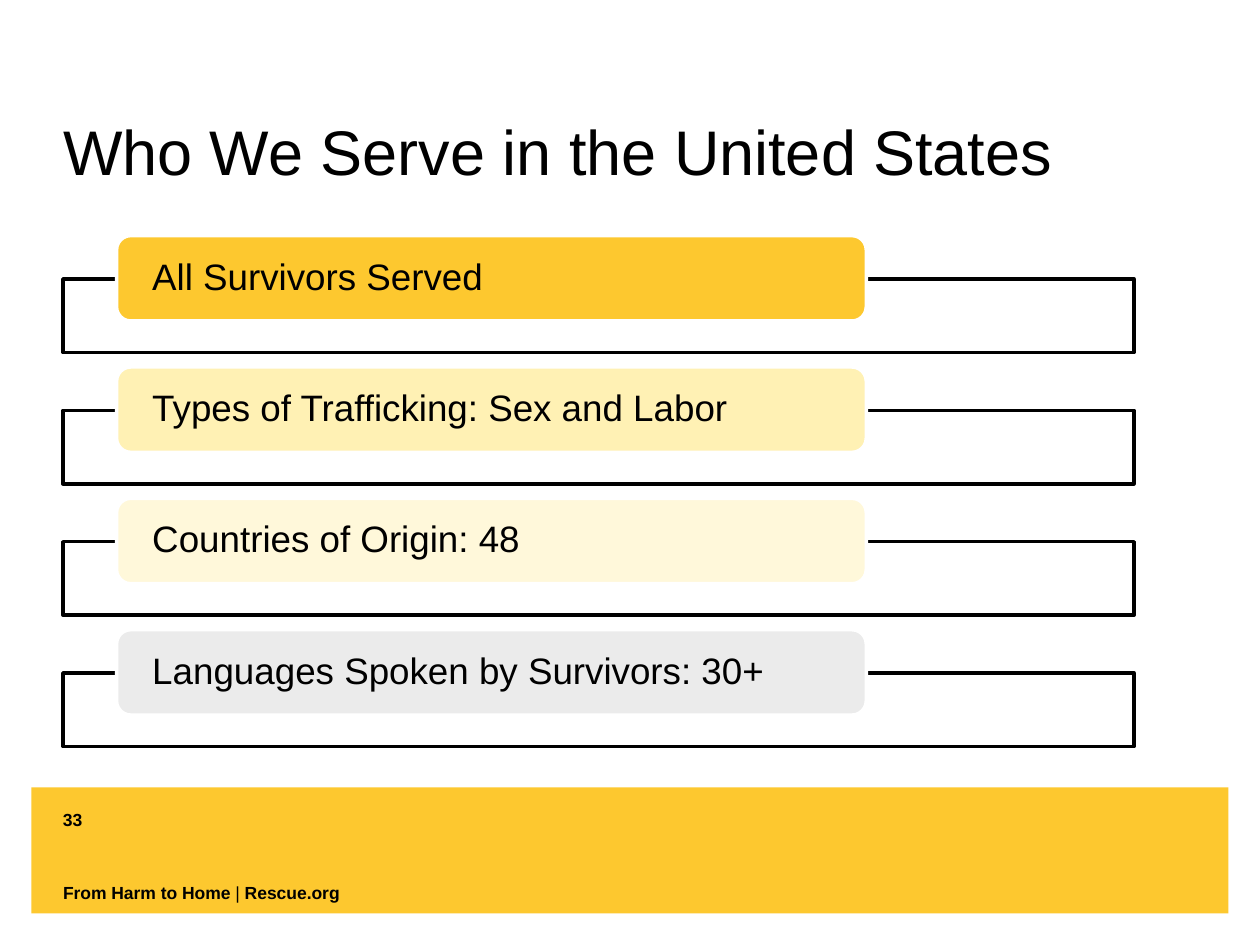
from pptx import Presentation
from pptx.dml.color import RGBColor
from pptx.enum.shapes import MSO_SHAPE
from pptx.enum.text import MSO_ANCHOR, PP_ALIGN
from pptx.util import Inches, Pt

GOLD = RGBColor(0xFD, 0xC8, 0x2F)
PALE = RGBColor(0xFF, 0xF1, 0xB4)
CREAM = RGBColor(0xFF, 0xF8, 0xDA)
GREY = RGBColor(0xEB, 0xEB, 0xEB)
BLACK = RGBColor(0, 0, 0)
WHITE = RGBColor(0xFF, 0xFF, 0xFF)

CELL = Inches(0.25)  # the slide is a grid of 40 columns by 30 rows

ITEMS = [
    ("All Survivors Served", GOLD),
    ("Types of Trafficking: Sex and Labor", PALE),
    ("Countries of Origin: 48", CREAM),
    ("Languages Spoken by Survivors: 30+", GREY),
]


def grid(*cells):
    return [round(cell * CELL) for cell in cells]


def style(run, size, bold=False):
    font = run.font
    font.name, font.size, font.bold = "Arial", Pt(size), bold
    font.color.rgb = BLACK


def frame(shape, anchor, side=0.0, top=0.0):
    """Set the insets and anchor of a shape's text and return its text frame."""
    text = shape.text_frame
    text.word_wrap = True
    text.vertical_anchor = anchor
    text.margin_left = text.margin_right = Inches(side)
    text.margin_top, text.margin_bottom = Inches(top), 0
    return text


def block(slide, kind, box, fill, line=None):
    shape = slide.shapes.add_shape(kind, *grid(*box))
    shape.shadow.inherit = False
    shape.fill.solid()
    shape.fill.fore_color.rgb = fill
    if line is None:
        shape.line.fill.background()
    else:
        shape.line.color.rgb = line
        shape.line.width = Pt(2)
    return shape


def label(slide, box, parts, anchor):
    """Add a small line of text from (words, bold) parts."""
    text = frame(slide.shapes.add_textbox(*grid(*box)), anchor)
    for words, bold in parts:
        run = text.paragraphs[0].add_run()
        run.text = words
        style(run, 10, bold)


def footer(slide, box):
    left, top, wide, high = box
    block(slide, MSO_SHAPE.RECTANGLE, box, GOLD)
    label(slide, (left + 1, top + 0.68, 3.32, 0.68), [("33", True)],
          MSO_ANCHOR.TOP)
    label(slide, (left + 1, top + high - 1, 13, 0.68),
          [("From Harm to Home ", True), ("|", False), (" Rescue.org", True)],
          MSO_ANCHOR.BOTTOM)


def title(slide, box, words):
    shape = slide.shapes.title
    shape.left, shape.top, shape.width, shape.height = grid(*box)
    text = frame(shape, MSO_ANCHOR.TOP, top=0.06)
    text.text = words
    text.paragraphs[0].alignment = PP_ALIGN.LEFT
    style(text.paragraphs[0].runs[0], 36)


def row(slide, box, words, fill):
    """Draw an outlined frame with a coloured tab over its top edge."""
    left, top, wide, high = box
    block(slide, MSO_SHAPE.RECTANGLE,
          (left, top + high * 0.33, wide, high * 0.56), WHITE, BLACK)
    tab = block(slide, MSO_SHAPE.ROUNDED_RECTANGLE,
                (left + wide * 0.05, top, wide * 0.7, high * 0.65), fill, WHITE)
    text = frame(tab, MSO_ANCHOR.MIDDLE, side=0.25)
    text.text = words
    line = text.paragraphs[0]
    line.alignment = PP_ALIGN.LEFT
    line.line_spacing = 0.9
    style(line.runs[0], 21)


def rows(slide, box, items):
    left, top, wide, high = box
    step = high / len(items)
    for place, (words, fill) in enumerate(items):
        row(slide, (left, top + place * step, wide, step), words, fill)


def main():
    deck = Presentation()
    deck.slide_width, deck.slide_height = grid(40, 30)
    slide = deck.slides.add_slide(deck.slide_layouts[5])
    footer(slide, (1, 25, 38, 5 - 1))
    title(slide, (2, 3.32, 36.32, 5.32), "Who We Serve in the United States")
    rows(slide, (2, 7.48, 34, 16.68), ITEMS)
    deck.save("out.pptx")


if __name__ == "__main__":
    main()
